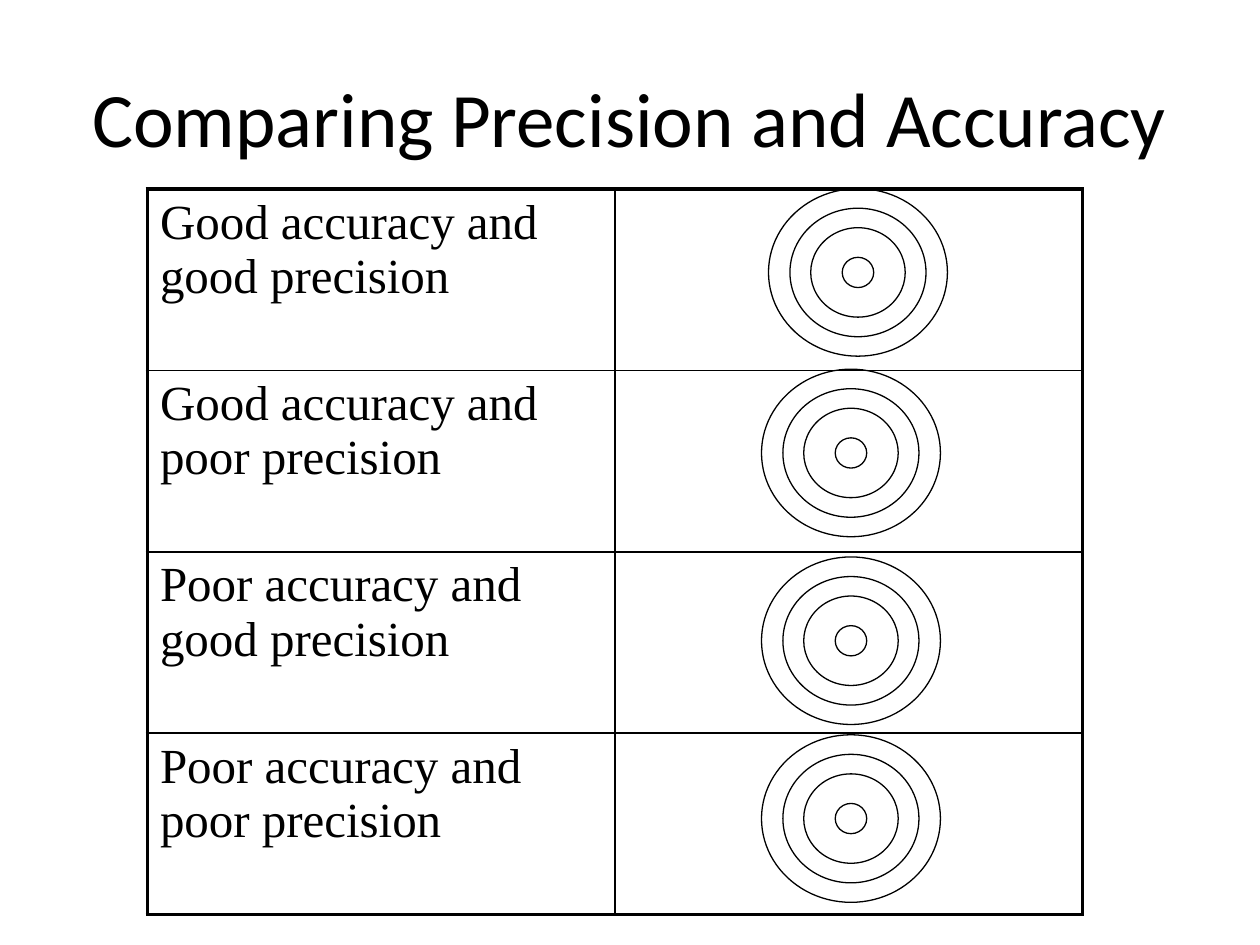
from dataclasses import dataclass

from lxml import etree
from pptx import Presentation
from pptx.dml.color import RGBColor
from pptx.enum.shapes import MSO_SHAPE
from pptx.enum.text import MSO_ANCHOR, PP_ALIGN
from pptx.oxml.ns import qn
from pptx.slide import Slide
from pptx.table import _Cell
from pptx.util import Inches, Pt

OVAL = MSO_SHAPE.OVAL
MIDDLE = MSO_ANCHOR.MIDDLE
CENTER = PP_ALIGN.CENTER
TITLE_ONLY = 5

BLACK = RGBColor(0, 0, 0)
OUTER_BORDER = 2.25
INNER_BORDER = 1

# Lengths in inches
TABLE_LEFT, TABLE_TOP = 1.17, 1.5
COLUMN_WIDTH, ROW_HEIGHT = 3.71, 1.44
COLUMNS = 2
RING_SIZES = ((0.25, 0.24), (0.75, 0.71), (1.08, 1.02), (1.42, 1.33))


@dataclass(frozen=True)
class Comparison:
    """A table row; the target's centre is given as shares of its cell."""
    label: str
    target_x: float
    target_y: float


COMPARISONS = (
    Comparison("Good accuracy and good precision", 0.52, 0.46),
    Comparison("Good accuracy and poor precision", 0.505, 0.455),
    Comparison("Poor accuracy and good precision", 0.505, 0.49),
    Comparison("Poor accuracy and poor precision", 0.505, 0.47),
)


def add_title(slide: Slide, text: str) -> None:
    title = slide.shapes.title
    title.left, title.top = Inches(0.5), Inches(0.3)
    title.width, title.height = Inches(9), Inches(1.25)
    title.text_frame.text = text
    title.text_frame.vertical_anchor = MIDDLE
    paragraph = title.text_frame.paragraphs[0]
    paragraph.alignment = CENTER
    paragraph.font.name = "Calibri"
    paragraph.font.size = Pt(44)
    paragraph.font.color.rgb = BLACK


def set_borders(cell: _Cell, row: int, column: int) -> None:
    """Draw thick lines on the table's edge and thin ones inside it."""
    edges = {
        "a:lnL": column == 0,
        "a:lnR": column == COLUMNS - 1,
        "a:lnT": row == 0,
        "a:lnB": row == len(COMPARISONS) - 1,
    }
    properties = cell._tc.get_or_add_tcPr()
    for position, (tag, is_outer) in enumerate(edges.items()):
        width = OUTER_BORDER if is_outer else INNER_BORDER
        line = etree.Element(qn(tag), w=str(Pt(width)))
        fill = etree.SubElement(line, qn("a:solidFill"))
        etree.SubElement(fill, qn("a:srgbClr"), val=str(BLACK))
        properties.insert(position, line)


def add_comparison_table(slide: Slide) -> None:
    rows = len(COMPARISONS)
    table = slide.shapes.add_table(
        rows, COLUMNS, Inches(TABLE_LEFT), Inches(TABLE_TOP),
        Inches(COLUMNS * COLUMN_WIDTH), Inches(rows * ROW_HEIGHT)).table
    table.first_row = False
    table.horz_banding = False
    for row, comparison in enumerate(COMPARISONS):
        table.cell(row, 0).text = comparison.label
        paragraph = table.cell(row, 0).text_frame.paragraphs[0]
        paragraph.font.name = "Times New Roman"
        paragraph.font.size = Pt(28)
        paragraph.font.color.rgb = BLACK
        for column in range(COLUMNS):
            cell = table.cell(row, column)
            cell.fill.background()
            set_borders(cell, row, column)


def add_target(slide: Slide, center_x: float, center_y: float) -> None:
    target = slide.shapes.add_group_shape()
    for width, height in RING_SIZES:
        ring = target.shapes.add_shape(
            OVAL, Inches(center_x - width / 2), Inches(center_y - height / 2),
            Inches(width), Inches(height))
        ring.shadow.inherit = False
        ring.fill.background()
        ring.line.color.rgb = BLACK
        ring.line.width = Pt(0.75)


def main() -> None:
    presentation = Presentation()
    presentation.slide_width = Inches(10)
    presentation.slide_height = Inches(7.5)
    slide = presentation.slides.add_slide(presentation.slide_layouts[TITLE_ONLY])
    add_title(slide, "Comparing Precision and Accuracy")
    add_comparison_table(slide)
    for row, comparison in enumerate(COMPARISONS):
        add_target(slide,
                   TABLE_LEFT + (1 + comparison.target_x) * COLUMN_WIDTH,
                   TABLE_TOP + (row + comparison.target_y) * ROW_HEIGHT)
    presentation.save("out.pptx")


if __name__ == "__main__":
    main()
